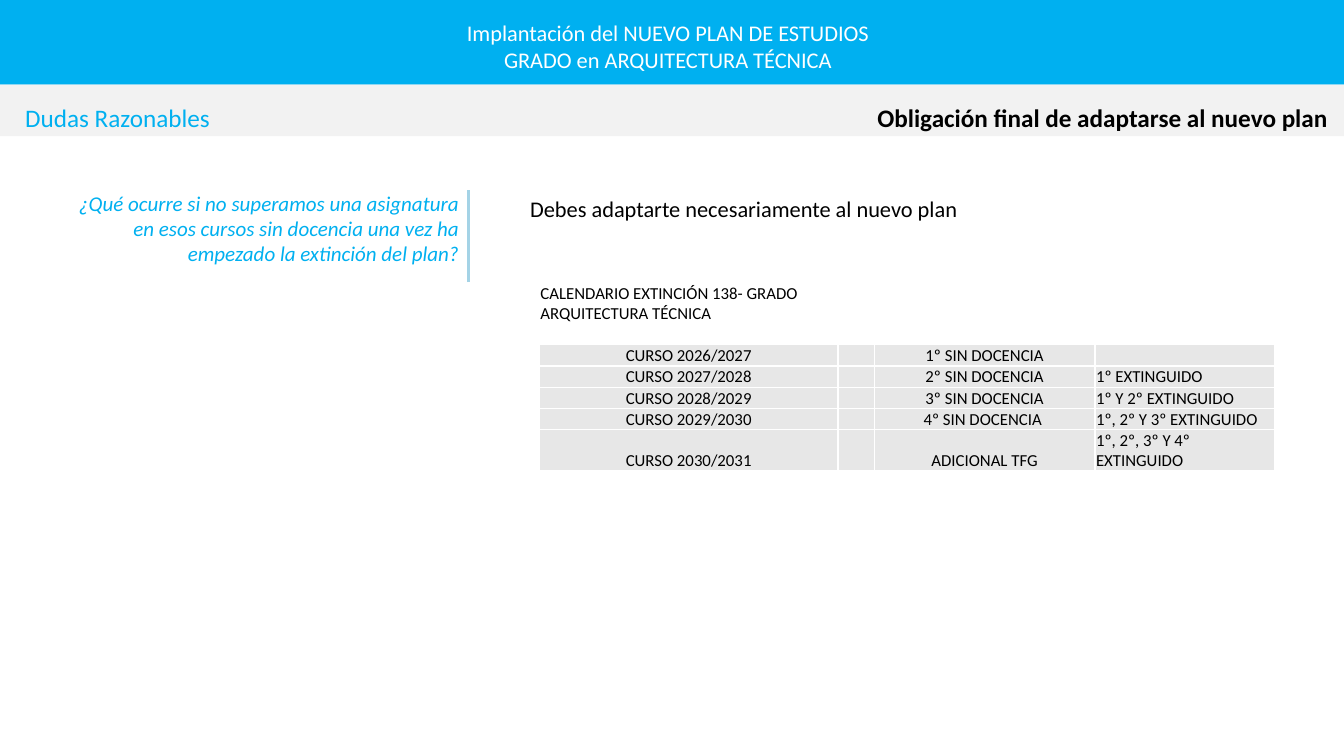
from lxml import etree
from pptx import Presentation
from pptx.dml.color import RGBColor
from pptx.enum.shapes import MSO_CONNECTOR, MSO_SHAPE
from pptx.enum.text import MSO_ANCHOR, MSO_AUTO_SIZE, PP_ALIGN
from pptx.oxml.ns import qn
from pptx.util import Inches, Pt

LEFT, CENTER, RIGHT, JUSTIFY = PP_ALIGN.LEFT, PP_ALIGN.CENTER, PP_ALIGN.RIGHT, PP_ALIGN.JUSTIFY
BOTTOM = MSO_ANCHOR.BOTTOM
GROW = MSO_AUTO_SIZE.SHAPE_TO_FIT_TEXT
RECTANGLE = MSO_SHAPE.RECTANGLE
STRAIGHT = MSO_CONNECTOR.STRAIGHT

BLUE = RGBColor(0x00, 0xB0, 0xF0)
PALE_BLUE = RGBColor(0xA4, 0xD3, 0xE6)
SUBTITLE_GREY = RGBColor(0xF2, 0xF2, 0xF2)
CELL_GREY = RGBColor(0xE7, 0xE7, 0xE7)
WHITE = RGBColor(0xFF, 0xFF, 0xFF)
BLACK = RGBColor(0x00, 0x00, 0x00)

CALENDAR_TITLE = "CALENDARIO EXTINCIÓN 138- GRADO ARQUITECTURA TÉCNICA"
CALENDAR = [
    ("CURSO 2026/2027", "", "1º SIN DOCENCIA", ""),
    ("CURSO 2027/2028", "", "2º SIN DOCENCIA", "1º EXTINGUIDO"),
    ("CURSO 2028/2029", "", "3º SIN DOCENCIA", "1º Y 2º EXTINGUIDO"),
    ("CURSO 2029/2030", "", "4º SIN DOCENCIA ", "1º, 2º Y 3º EXTINGUIDO"),
    ("CURSO 2030/2031", "", "ADICIONAL TFG", "1º, 2º, 3º Y 4º EXTINGUIDO"),
]
CALENDAR_COLUMNS = (22.21, 2.7, 16.43, 13.35)
CALENDAR_ALIGNS = (CENTER, CENTER, CENTER, LEFT)
SINGLE_ROW, DOUBLE_ROW = 2.8, 5.47
CALENDAR_ROWS = (DOUBLE_ROW, *[SINGLE_ROW] * 5, DOUBLE_ROW)


class PageBuilder:
    font_name = "Calibri"
    cell_size = 12

    def __init__(self, deck):
        self.deck = deck
        self.page = deck.slides.add_slide(deck.slide_layouts[6])

    def across(self, percent):
        return round(self.deck.slide_width * percent / 100)

    def down(self, percent):
        return round(self.deck.slide_height * percent / 100)

    def area(self, left, top, width, height):
        return self.across(left), self.down(top), self.across(width), self.down(height)

    def band(self, top, height, color):
        box = self.page.shapes.add_shape(RECTANGLE, *self.area(0, top, 100, height))
        box.shadow.inherit = False
        box.fill.solid()
        box.fill.fore_color.rgb = color
        box.line.fill.background()

    def span(self, para, text, size, color, bold=False, italic=False):
        span = para.add_run()
        span.text = text
        span.font.name = self.font_name
        span.font.size = Pt(size)
        span.font.color.rgb = color
        span.font.bold = bold
        span.font.italic = italic

    def text(self, place, lines, size, color, align, inset=0.1, after=0, **style):
        frame = self.page.shapes.add_textbox(*self.area(*place)).text_frame
        frame.word_wrap = True
        frame.auto_size = GROW
        frame.margin_left = frame.margin_right = Inches(inset)
        frame.margin_top = frame.margin_bottom = Inches(0.05)
        for index, line in enumerate(lines):
            para = frame.add_paragraph() if index else frame.paragraphs[0]
            para.alignment = align
            para.space_after = Pt(after)
            self.span(para, line, size, color, **style)

    def upright(self, left, top, bottom, color, width):
        x = self.across(left)
        line = self.page.shapes.add_connector(STRAIGHT, x, self.down(bottom), x, self.down(top))
        line.line.color.rgb = color
        line.line.width = Pt(width)
        etree.SubElement(line._element.spPr, qn("a:effectLst"))

    def cell(self, cell, text, align, shaded):
        cell.margin_left = cell.margin_right = cell.margin_top = Inches(0.01)
        cell.margin_bottom = 0
        cell.vertical_anchor = BOTTOM
        para = cell.text_frame.paragraphs[0]
        para.alignment = align
        if text:
            self.span(para, text, self.cell_size, BLACK)
        else:
            etree.SubElement(para._p, qn("a:endParaRPr"), sz=str(self.cell_size * 100))
        if shaded:
            self.borders(cell)
            cell.fill.solid()
            cell.fill.fore_color.rgb = CELL_GREY
        else:
            cell.fill.background()

    def borders(self, cell):
        properties = cell._tc.get_or_add_tcPr()
        for side in ("lnL", "lnR", "lnT", "lnB"):
            edge = etree.SubElement(properties, qn(f"a:{side}"), w=str(Pt(1)))
            fill = etree.SubElement(edge, qn("a:solidFill"))
            etree.SubElement(fill, qn("a:srgbClr"), val=str(WHITE))

    def calendar(self, left, top):
        place = self.area(left, top, sum(CALENDAR_COLUMNS), sum(CALENDAR_ROWS))
        rows = [(CALENDAR_TITLE, "", "", ""), ("", "", "", ""), *CALENDAR]
        table = self.page.shapes.add_table(len(rows), len(CALENDAR_COLUMNS), *place).table
        table.first_row = table.horz_banding = False
        for column, width in zip(table.columns, CALENDAR_COLUMNS):
            column.width = self.across(width)
        for row, height in zip(table.rows, CALENDAR_ROWS):
            row.height = self.down(height)
        for r, texts in enumerate(rows):
            for c, text in enumerate(texts):
                align = CALENDAR_ALIGNS[c] if r else LEFT
                self.cell(table.cell(r, c), text, align, shaded=r > 1)
        table.cell(0, 0).merge(table.cell(0, 1))


def main():
    deck = Presentation()
    deck.slide_width, deck.slide_height = Inches(13.33), Inches(7.5)
    page = PageBuilder(deck)
    page.band(0, 11.2, BLUE)
    page.text((4.58, 24.53, 30.31, 11.47),
              ["¿Qué ocurre si no superamos una asignatura en esos cursos sin docencia "
               "una vez ha empezado la extinción del plan?"],
              15, BLUE, RIGHT, italic=True)
    page.text((17.7, 1.87, 64.37, 8.53),
              ["Implantación del NUEVO PLAN DE ESTUDIOS ", "GRADO en ARQUITECTURA TÉCNICA "],
              16, WHITE, CENTER, inset=0.05)
    page.upright(34.88, 25.2, 37.33, PALE_BLUE, 2.25)
    page.text((38.71, 25.2, 57.54, 52), ["Debes adaptarte necesariamente al nuevo plan"],
              16, BLACK, JUSTIFY, after=6)
    page.band(11.2, 6.8, SUBTITLE_GREY)
    page.text((1.5, 12.93, 19.73, 5.33), ["Dudas Razonables"], 18, BLUE, LEFT, inset=0.05)
    page.text((42.84, 12.93, 56.34, 5.33), ["Obligación final de adaptarse al nuevo plan"],
              18, BLACK, RIGHT, inset=0.05, bold=True)
    page.calendar(40.14, 37.33)
    deck.save("out.pptx")


if __name__ == "__main__":
    main()
